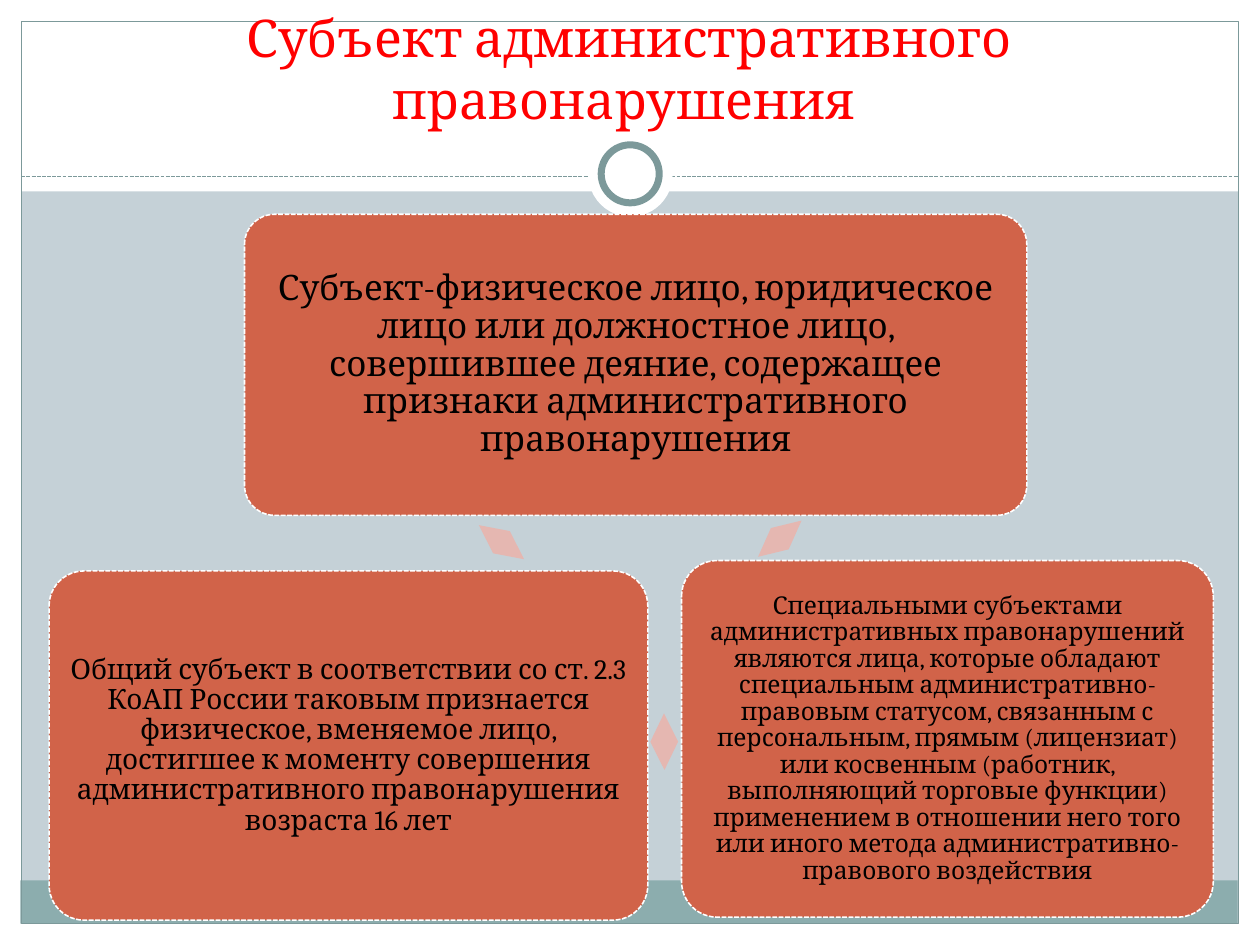
import pptx
import pptx.util
import pptx.dml.color
import pptx.enum.dml
import pptx.enum.shapes
import pptx.enum.text
import pptx.oxml.ns
import lxml.etree

Cm, Pt = pptx.util.Cm, pptx.util.Pt
Kind = pptx.enum.shapes.MSO_SHAPE
Dash = pptx.enum.dml.MSO_LINE
Anchor = pptx.enum.text.MSO_ANCHOR
Align = pptx.enum.text.PP_ALIGN

WIDE, HIGH, EDGE = 25.4, 19.05, 0.43
WHITE, TEAL, BAND, BACK = "FFFFFF", "7C999A", "8CADAE", "C5D1D7"
RUST, PINK, RED, BLACK = "D16349", "E5B7B1", "FF0000", "000000"

TITLE = "Субъект административного правонарушения "
FRAME = [
    (Kind.RECTANGLE, (0, HIGH - EDGE, WIDE, EDGE), WHITE, None),
    (Kind.RECTANGLE, (0, 0, WIDE, 3.86), WHITE, None),
    (Kind.RECTANGLE, (0, 0, EDGE, HIGH), WHITE, None),
    (Kind.RECTANGLE, (WIDE - EDGE, 0, EDGE, HIGH), WHITE, None),
    (Kind.RECTANGLE, (0.41, 17.75, 24.54, 0.87), BAND, None),
    (Kind.RECTANGLE, (EDGE, EDGE, WIDE - 2 * EDGE, HIGH - 2 * EDGE), None, (TEAL, 0.75)),
]
RINGS = [
    (Kind.OVAL, (11.86, 2.67, 1.7, 1.7), WHITE, None),
    (Kind.OVAL, (12.12, 2.92, 1.17, 1.17), WHITE, (TEAL, 4)),
]
CARDS = [
    ((4.93, 4.32, 15.77, 6.07), 20, 0.2,
     "Субъект-физическое лицо, юридическое лицо или должностное лицо, "
     "совершившее деяние, содержащее признаки административного правонарушения"),
    ((13.74, 11.3, 10.72, 7.19), 14, 0.15,
     "Специальными субъектами административных правонарушений являются лица, "
     "которые обладают специальным административно-правовым статусом, связанным "
     "с персональным, прямым (лицензиат) или косвенным (работник, выполняющий "
     "торговые функции) применением в отношении него того или иного метода "
     "административно-правового воздействия"),
    ((0.99, 11.51, 12.07, 7.04), 16, 0.18,
     "Общий субъект в соответствии со ст. 2.3 КоАП России таковым признается "
     "физическое, вменяемое лицо, достигшее к моменту совершения "
     "административного правонарушения возраста 16 лет"),
]
ARROWS = [(15.44, 10.29, 50.2), (13.11, 14.38, 179.5), (9.83, 10.36, 307)]


def tint(code):
    return pptx.dml.color.RGBColor.from_string(code)


def apply(part, form):
    for name, value in form.items():
        setattr(part, name, value)


def paint(fill, code):
    if code:
        fill.solid()
        fill.fore_color.rgb = tint(code)
    else:
        fill.background()


def stroke(line, code, width, dash=None):
    paint(line.fill, code)
    apply(line, {"width": Pt(width), "dash_style": dash})


def draw(kind, box, fill, edge, *adjs):
    shape = slide.shapes.add_shape(kind, *map(Cm, box))
    shape.shadow.inherit = False
    for i, value in enumerate(adjs):
        shape.adjustments[i] = value
    paint(shape.fill, fill)
    if edge:
        stroke(shape.line, *edge)
    else:
        shape.line.fill.background()
    return shape


def write(shape, text, size, code, anchor, pads, gap):
    frame = shape.text_frame
    sides = ("left", "top", "right", "bottom")
    apply(frame, {"word_wrap": True, "vertical_anchor": anchor})
    apply(frame, {f"margin_{side}": Cm(pad) for side, pad in zip(sides, pads)})
    para = frame.paragraphs[0]
    apply(para, {"alignment": Align.CENTER, "line_spacing": gap})
    run = para.add_run()
    run.text = text
    apply(run.font, {"size": Pt(size), "name": "Cambria"})
    run.font.color.rgb = tint(code)


deck = pptx.Presentation()
apply(deck, {"slide_width": Cm(WIDE), "slide_height": Cm(HIGH)})
slide = deck.slides.add_slide(deck.slide_layouts[6])
paint(slide.background.fill, BACK)

for item in FRAME:
    draw(*item)

rule = slide.shapes.add_connector(
    pptx.enum.shapes.MSO_CONNECTOR.STRAIGHT,
    *map(Cm, (EDGE, 3.56, WIDE - EDGE, 3.56)))
stroke(rule.line, TEAL, 0.75, Dash.SQUARE_DOT)
lxml.etree.SubElement(rule._element.spPr, pptx.oxml.ns.qn("a:effectLst"))

for item in RINGS:
    draw(*item)

head = slide.shapes.add_textbox(*map(Cm, (0.84, 0.64, 23.7, 2.11)))
write(head, TITLE, 29.7, RED, Anchor.BOTTOM, (0.25, 0.13, 0.25, 0.13), 1.0)

for box, size, pad, text in CARDS:
    card = draw(Kind.ROUNDED_RECTANGLE, box, RUST, (WHITE, 0.9, Dash.SQUARE_DOT), 0.1)
    write(card, text, size, BLACK, Anchor.MIDDLE, [pad] * 4, 0.9)

for left, top, turn in ARROWS:
    arrow = draw(Kind.LEFT_RIGHT_ARROW, (left, top, 0.56, 1.14), PINK, None, 0.6, 0.5)
    arrow.rotation = turn

deck.save("out.pptx")
